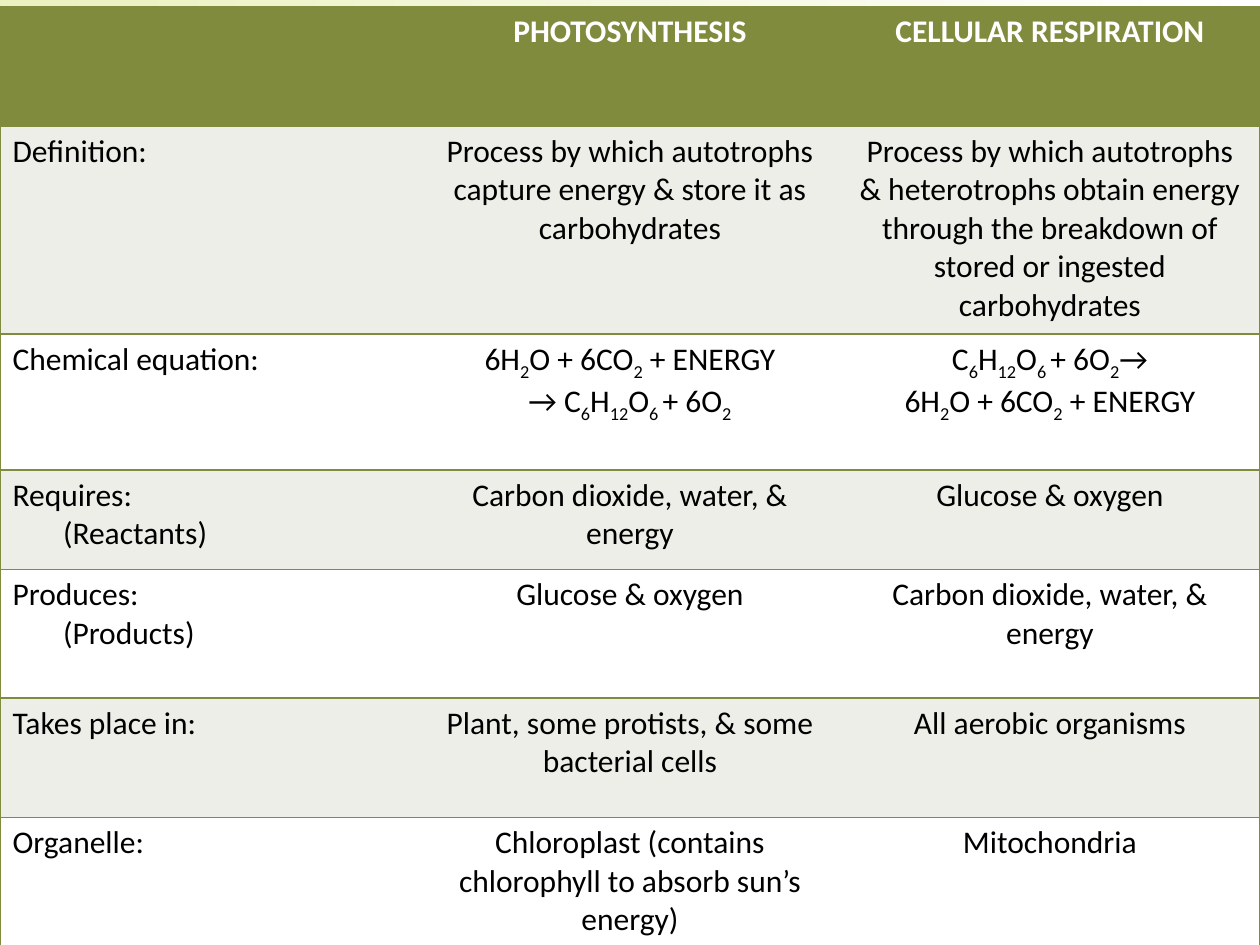
from dataclasses import dataclass
from pptx import Presentation
from pptx.dml.color import RGBColor
from pptx.enum.text import PP_ALIGN
from pptx.oxml.ns import qn
from pptx.util import Inches, Pt
from lxml.etree import SubElement


@dataclass(frozen=True)
class Theme:
    font: str = "Calibri"
    size: int = 18
    line: float = 1
    olive: str = "818B3D"
    band: str = "EDEEE8"
    white: str = "FFFFFF"
    black: str = "000000"
    pale: str = "EBF1BF"


@dataclass(frozen=True)
class Row:
    height: float
    label: str
    photo: str
    resp: str


THEME = Theme()
WIDTH, HEIGHT, TOP = 10, 7.5, 0.05
INDENT = 0.4
SUGAR = "C_6_H_12_O_6 _+ 6O_2_"
WASTE = "6H_2_O + 6CO_2_ + ENERGY"
FUEL = "Glucose & oxygen"
GASES = "Carbon dioxide, water, & energy"
ROWS = [
    Row(0.95, "", "PHOTOSYNTHESIS", "CELLULAR RESPIRATION"),
    Row(1.65, "Definition:",
        "Process by which autotrophs capture energy & store it as carbohydrates",
        "Process by which autotrophs & heterotrophs obtain energy through "
        "the breakdown of stored or ingested carbohydrates"),
    Row(1.08, "Chemical equation:", f"{WASTE}\n→ {SUGAR}", f"{SUGAR}→\n{WASTE}"),
    Row(0.79, "Requires:\n(Reactants)", GASES, FUEL),
    Row(1.02, "Produces:\n(Products)", FUEL, GASES),
    Row(0.95, "Takes place in:", "Plant, some protists, & some bacterial cells",
        "All aerobic organisms"),
    Row(0.95, "Organelle:",
        "Chloroplast (contains chlorophyll to absorb sun’s energy)",
        "Mitochondria"),
]


def add_edge(cell, side: str, shown: bool) -> None:
    line = SubElement(cell._tc.get_or_add_tcPr(), qn(f"a:ln{side}"),
                      w=str(Pt(THEME.line)))
    if shown:
        fill = SubElement(line, qn("a:solidFill"))
        SubElement(fill, qn("a:srgbClr"), val=THEME.olive)
    else:
        SubElement(line, qn("a:noFill"))


def write(cell, text: str, col: int, head: bool) -> None:
    frame = cell.text_frame
    for i, line in enumerate(text.split("\n")):
        para = frame.add_paragraph() if i else frame.paragraphs[0]
        para.alignment = PP_ALIGN.CENTER if col else PP_ALIGN.LEFT
        if i and not col:
            para._p.get_or_add_pPr().set("marL", str(Inches(INDENT)))
        font = para.font
        font.name, font.size, font.bold = THEME.font, Pt(THEME.size), head
        font.color.rgb = RGBColor.from_string(THEME.white if head else THEME.black)
        for j, part in enumerate(line.split("_")):
            if part:
                run = para.add_run()
                run.text = part
                if j % 2:
                    run.font._element.set("baseline", "-25000")


def draw_cell(cell, text: str, row: int, col: int, last: int) -> None:
    for side, shown in (("L", col == 0), ("R", col == last), ("T", True), ("B", True)):
        add_edge(cell, side, shown)
    tint = THEME.band if row % 2 else THEME.white
    cell.fill.solid()
    cell.fill.fore_color.rgb = RGBColor.from_string(tint if row else THEME.olive)
    write(cell, text, col, row == 0)


def draw_table(slide, rows: list[Row]) -> None:
    total = sum(row.height for row in rows)
    table = slide.shapes.add_table(len(rows), 3, 0, Inches(TOP),
                                   Inches(WIDTH), Inches(total)).table
    table.first_row = table.horz_banding = False
    for i, row in enumerate(rows):
        table.rows[i].height = Inches(row.height)
        for j, text in enumerate((row.label, row.photo, row.resp)):
            draw_cell(table.cell(i, j), text, i, j, 2)


def paint(slide) -> None:
    fill = slide.background.fill
    fill.gradient()
    fill.gradient_angle = 0
    for stop, tint in zip(fill.gradient_stops, (THEME.pale, THEME.white)):
        stop.color.rgb = RGBColor.from_string(tint)


def main() -> None:
    deck = Presentation()
    deck.slide_width, deck.slide_height = Inches(WIDTH), Inches(HEIGHT)
    slide = deck.slides.add_slide(deck.slide_layouts[6])
    paint(slide)
    draw_table(slide, ROWS)
    deck.save("out.pptx")


if __name__ == "__main__":
    main()
